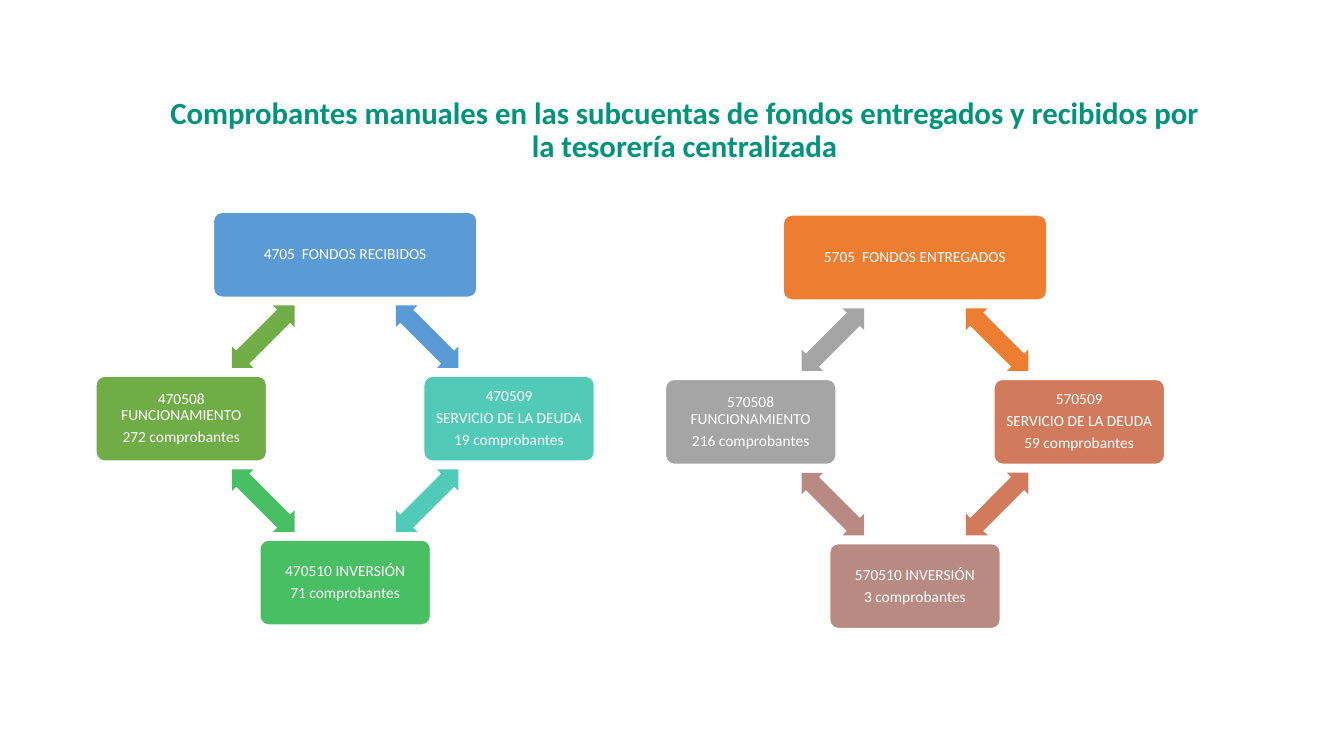
from pptx import Presentation
from pptx.dml.color import RGBColor
from pptx.enum.shapes import MSO_SHAPE
from pptx.enum.text import MSO_ANCHOR, MSO_AUTO_SIZE, PP_ALIGN
from pptx.util import Cm, Pt


def color(hex_code):
    return RGBColor.from_string(hex_code)


class FundsSlide:
    """Holds the style and the current slide."""

    FONT = "Calibri"
    WHITE = "FFFFFF"
    TITLE_COLOR = "00947A"
    BOX_WIDTH, BOX_HEIGHT = 4.3, 2.14
    TOP_WIDTH = 6.64
    ARROW_WIDTH, ARROW_HEIGHT = 2.23, 0.77
    DIRECTIONS = [(0, -1), (1, 0), (0, 1), (-1, 0)]

    def __init__(self, deck):
        self.slide = deck.slides.add_slide(deck.slide_layouts[5])

    def add_lines(self, frame, lines, size, hex_code, bold=False, gap=0):
        for index, line in enumerate(lines):
            paragraph = frame.paragraphs[0] if index == 0 else frame.add_paragraph()
            paragraph.alignment = PP_ALIGN.CENTER
            paragraph.line_spacing = 0.9
            paragraph.space_before = Pt(0)
            paragraph.space_after = Pt(gap)
            run = paragraph.add_run()
            run.text = line
            run.font.name = self.FONT
            run.font.size = Pt(size)
            run.font.bold = bold
            run.font.color.rgb = color(hex_code)

    def title(self, text):
        heading = self.slide.shapes.title
        heading.left, heading.top = Cm(3.89), Cm(2.34)
        heading.width, heading.height = Cm(26.72), Cm(1.96)
        frame = heading.text_frame
        frame.word_wrap = True
        frame.auto_size = MSO_AUTO_SIZE.SHAPE_TO_FIT_TEXT
        frame.vertical_anchor = MSO_ANCHOR.TOP
        self.add_lines(frame, [text], 22, self.TITLE_COLOR, bold=True)

    def centered(self, kind, x, y, width, height, fill):
        shape = self.slide.shapes.add_shape(
            kind, Cm(x - width / 2), Cm(y - height / 2), Cm(width), Cm(height))
        shape.shadow.inherit = False
        shape.fill.solid()
        shape.fill.fore_color.rgb = color(fill)
        return shape

    def box(self, x, y, width, fill, lines):
        account = self.centered(
            MSO_SHAPE.ROUNDED_RECTANGLE, x, y, width, self.BOX_HEIGHT, fill)
        account.adjustments[0] = 0.1
        account.line.color.rgb = color(self.WHITE)
        account.line.width = Pt(1)
        frame = account.text_frame
        frame.word_wrap = True
        frame.vertical_anchor = MSO_ANCHOR.MIDDLE
        frame.margin_left = frame.margin_right = Cm(0.19)
        frame.margin_top = frame.margin_bottom = Cm(0.19)
        self.add_lines(frame, lines, 11, self.WHITE, gap=3.85)

    def arrow(self, x, y, angle, fill):
        link = self.centered(MSO_SHAPE.LEFT_RIGHT_ARROW, x, y,
                             self.ARROW_WIDTH, self.ARROW_HEIGHT, fill)
        link.adjustments[0], link.adjustments[1] = 0.6, 0.5
        link.line.fill.background()
        link.rotation = angle

    def cycle(self, center_x, center_y, radius, accounts):
        """Place accounts clockwise from the top, each followed by its arrow."""
        for index, (fill, lines) in enumerate(accounts):
            dx, dy = self.DIRECTIONS[index]
            next_dx, next_dy = self.DIRECTIONS[(index + 1) % len(self.DIRECTIONS)]
            width = self.TOP_WIDTH if index == 0 else self.BOX_WIDTH
            self.box(center_x + radius * dx, center_y + radius * dy,
                     width, fill, lines)
            self.arrow(center_x + radius * (dx + next_dx) / 2,
                       center_y + radius * (dy + next_dy) / 2,
                       45 + 90 * index, fill)


RECEIVED = [
    ("5B9BD5", ["4705  FONDOS RECIBIDOS"]),
    ("52CAB8", ["470509", "SERVICIO DE LA DEUDA", "19 comprobantes"]),
    ("49BF64", ["470510 INVERSIÓN", "71 comprobantes"]),
    ("70AD47", ["470508 FUNCIONAMIENTO", "272 comprobantes"]),
]
DELIVERED = [
    ("ED7D31", ["5705  FONDOS ENTREGADOS"]),
    ("D17B5C", ["570509", "SERVICIO DE LA DEUDA", "59 comprobantes"]),
    ("B98A82", ["570510 INVERSIÓN", "3 comprobantes"]),
    ("A5A5A5", ["570508 FUNCIONAMIENTO", "216 comprobantes"]),
]


def main():
    deck = Presentation()
    deck.slide_width, deck.slide_height = Cm(33.87), Cm(19.05)
    funds = FundsSlide(deck)

    # Title
    funds.title("Comprobantes manuales en las subcuentas de fondos entregados "
                "y recibidos por la tesorería centralizada")

    # Received funds on the left, delivered funds on the right
    funds.cycle(8.7, 10.55, 4.13, RECEIVED)
    funds.cycle(23.06, 10.63, 4.14, DELIVERED)

    deck.save("out.pptx")


if __name__ == "__main__":
    main()
